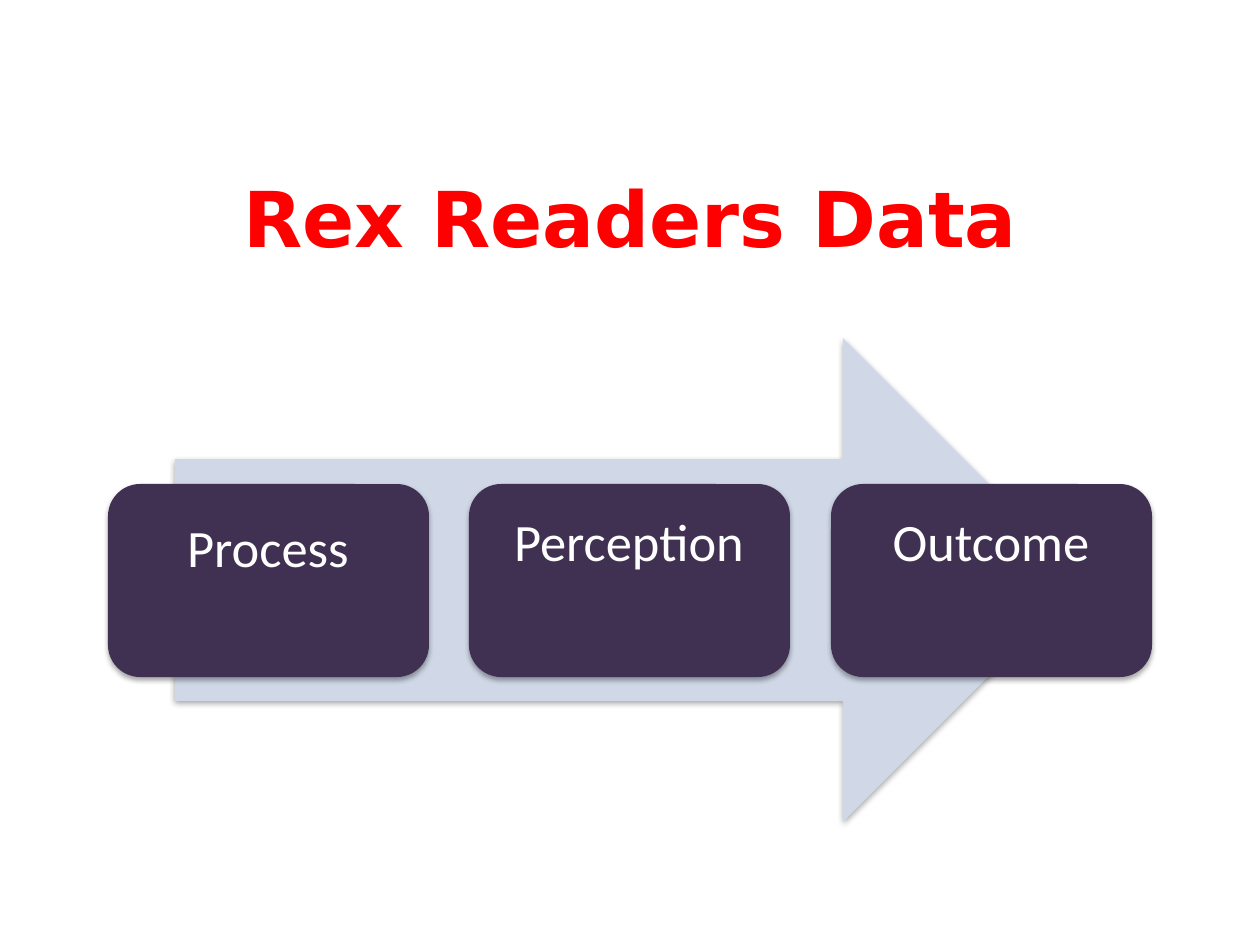
import pptx
import pptx.util
import pptx.dml.color
import pptx.enum.shapes
import pptx.enum.text
import pptx.oxml

SCALE = 914400 / 126
HUES = {"title": "FF0000", "arrow": "D0D8E8", "card": "403152", "label": "FFFFFF"}
KINDS = pptx.enum.shapes.MSO_SHAPE
ANCHOR = pptx.enum.text.MSO_ANCHOR
SHADE = (
    '<a:effectLst xmlns:a="http://schemas.openxmlformats.org/drawingml/2006/main">'
    '<a:outerShdw blurRad="40000" dist="23000" dir="5400000" rotWithShape="0">'
    '<a:srgbClr val="000000"><a:alpha val="35000"/></a:srgbClr>'
    '</a:outerShdw></a:effectLst>'
)


def px(*nums):
    return [round(num * SCALE) for num in nums]


def tint(name):
    return pptx.dml.color.RGBColor.from_string(HUES[name])


def add_form(slide, kind, area, hue):
    form = slide.shapes.add_shape(kind, *px(*area))
    form.fill.solid()
    form.fill.fore_color.rgb = tint(hue)
    form.line.fill.background()
    form.shadow.inherit = False
    props = form._element.spPr
    for old in props.findall(pptx.oxml.ns.qn("a:effectLst")):
        props.remove(old)
    props.append(pptx.oxml.parse_xml(SHADE))


def add_text(slide, text, area, *, font, size, hue, bold=False,
             anchor=ANCHOR.MIDDLE, inset=15, top=15, lead=1.0):
    box = slide.shapes.add_textbox(*px(*area))
    frame = box.text_frame
    frame.word_wrap = True
    frame.vertical_anchor = anchor
    frame.margin_left, frame.margin_right, frame.margin_bottom = px(inset, inset, inset)
    frame.margin_top = px(top)[0]
    para = frame.paragraphs[0]
    para.alignment = pptx.enum.text.PP_ALIGN.CENTER
    para.line_spacing = lead
    run = para.add_run()
    run.text = text
    run.font.name = font
    run.font.size = pptx.util.Pt(size)
    run.font.bold = bold
    run.font.color.rgb = tint(hue)


def add_card(slide, text, left, top):
    add_form(slide, KINDS.ROUNDED_RECTANGLE, (left, 484, 321, 193), "card")
    add_text(slide, text, (left + 9, 493, 302, 175), font="Calibri", size=30,
             hue="label", anchor=ANCHOR.TOP, top=top, lead=0.9)


def main():
    deck = pptx.Presentation()
    deck.slide_width, deck.slide_height = px(1260, 945)
    slide = deck.slides.add_slide(deck.slide_layouts[6])
    add_text(slide, "Rex Readers Data", (95, 163, 1071, 107),
             font="DejaVu Sans", size=44, hue="title", bold=True)
    add_form(slide, KINDS.RIGHT_ARROW, (175, 338, 910, 484), "arrow")
    cards = [("Process", 29), ("Perception", 23), ("Outcome", 23)]
    for rank, (text, top) in enumerate(cards):
        add_card(slide, text, 108 + rank * 723 // 2, top)
    deck.save("out.pptx")


if __name__ == "__main__":
    main()
